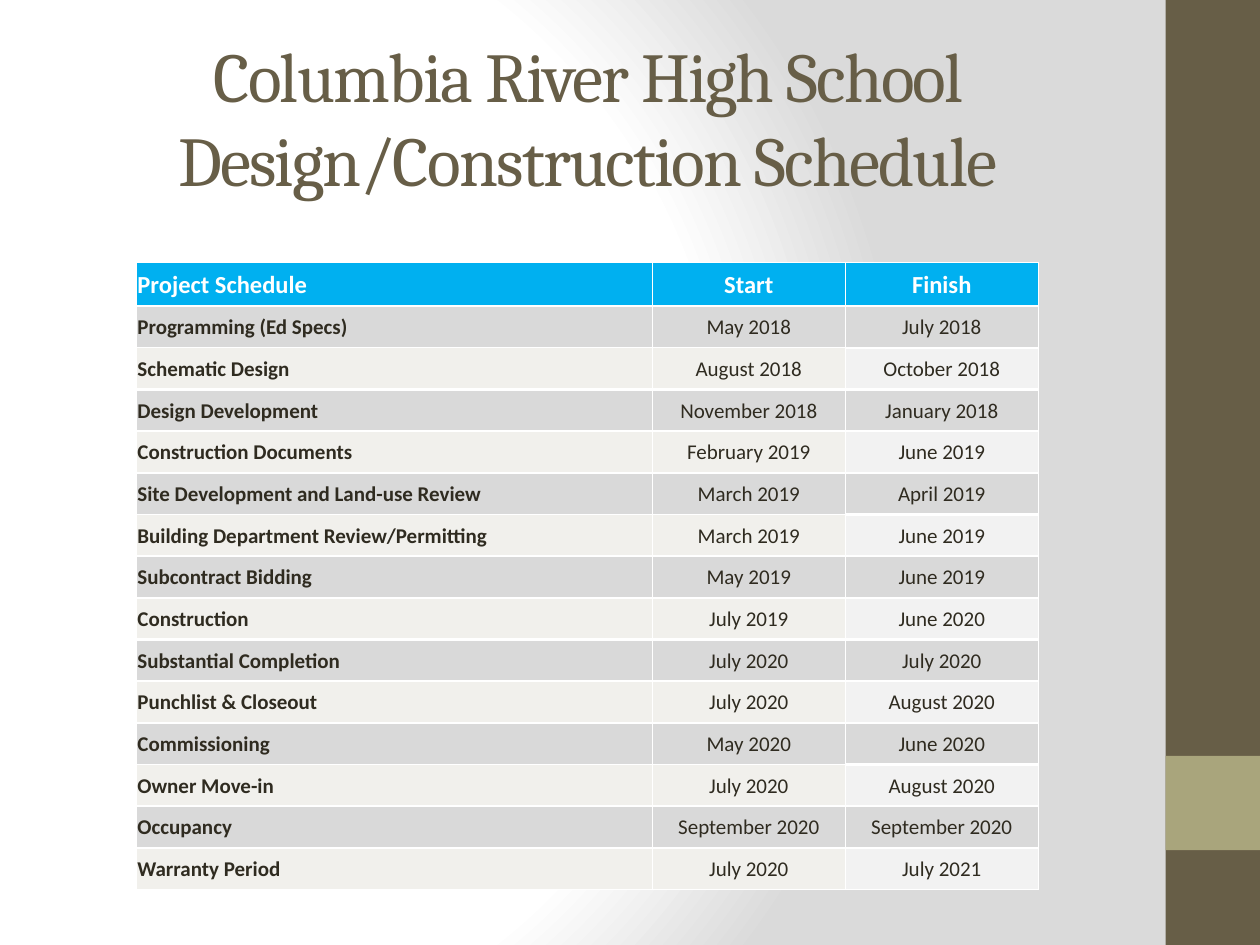
from lxml.etree import SubElement
from pptx import Presentation
from pptx.dml.color import RGBColor
from pptx.enum.shapes import MSO_SHAPE
from pptx.enum.text import MSO_ANCHOR, MSO_AUTO_SIZE, PP_ALIGN
from pptx.oxml import parse_xml
from pptx.oxml.ns import nsdecls, qn
from pptx.util import Cm, Pt

BROWN, SAGE, WHITE, INK = "675E47", "A9A57C", "FFFFFF", "2F2B20"
BLUE, GREY, CREAM, PALE = "00B0F0", "D9D9D9", "F1F0EC", "F2F2F2"
HEADER_H, ROW_H = 0.89, 0.84
COL_WIDTHS = (10.41, 3.89, 3.89)
SCHEDULE = [
    ("Project Schedule", "Start", "Finish"),
    ("Programming (Ed Specs)", "May 2018", "July 2018"),
    ("Schematic Design", "August 2018", "October 2018"),
    ("Design Development", "November 2018", "January 2018"),
    ("Construction Documents", "February 2019", "June 2019"),
    ("Site Development and Land-use Review", "March 2019", "April 2019"),
    ("Building Department Review/Permitting", "March 2019", "June 2019"),
    ("Subcontract Bidding", "May 2019", "June 2019"),
    ("Construction", "July 2019", "June 2020"),
    ("Substantial Completion", "July 2020", "July 2020"),
    ("Punchlist & Closeout", "July 2020", "August 2020"),
    ("Commissioning", "May 2020", "June 2020"),
    ("Owner Move-in", "July 2020", "August 2020"),
    ("Occupancy", "September 2020", "September 2020"),
    ("Warranty Period", "July 2020", "July 2021"),
]


def rgb(color):
    return RGBColor.from_string(color)


def set_background(s):
    """Give the slide a circular white-to-grey gradient."""
    stops = "".join(
        f'<a:gs pos="{pos * 1000}"><a:srgbClr val="{color}"/></a:gs>'
        for pos, color in ((0, WHITE), (75, WHITE), (100, "DADADA")))
    bg = parse_xml(
        f'<p:bg {nsdecls("p", "a")}><p:bgPr><a:gradFill rotWithShape="1">'
        f'<a:gsLst>{stops}</a:gsLst><a:path path="circle">'
        '<a:fillToRect l="20000" t="50000" r="100000" b="50000"/></a:path>'
        '</a:gradFill><a:effectLst/></p:bgPr></p:bg>')
    s.element.cSld.insert(0, bg)


def add_bar(s, top, height, color):
    sp = s.shapes.add_shape(MSO_SHAPE.RECTANGLE, Cm(23.5), Cm(top), Cm(1.9), Cm(height))
    sp.shadow.inherit = False
    sp.fill.solid()
    sp.fill.fore_color.rgb = rgb(color)
    sp.line.fill.background()


def add_run(p, text, font, size, color, bold=False):
    r = p.add_run()
    r.text = text
    r.font.name = font
    r.font.size = Pt(size)
    r.font.bold = bold
    r.font.color.rgb = rgb(color)
    return r


def set_title(s, text):
    sp = s.shapes.title
    sp.left, sp.top, sp.width, sp.height = Cm(1.27), Cm(0.76), Cm(21.16), Cm(3.18)
    tf = sp.text_frame
    tf.word_wrap = True
    tf.auto_size = MSO_AUTO_SIZE.NONE
    tf.vertical_anchor = MSO_ANCHOR.MIDDLE
    p = tf.paragraphs[0]
    p.alignment = PP_ALIGN.CENTER
    r = add_run(p, text, "Cambria", 40, BROWN)
    r.font._element.set("spc", "-100")


def set_borders(cell, widths):
    """Draw white borders; widths are points for left, right, top, bottom."""
    tc_pr = cell._tc.get_or_add_tcPr()
    for side, width in zip("LRTB", widths):
        ln = SubElement(tc_pr, qn(f"a:ln{side}"), w=str(Pt(width)))
        fill = SubElement(ln, qn("a:solidFill"))
        SubElement(fill, qn("a:srgbClr"), val=WHITE)


def border_widths(row, col):
    last_row, last_col = len(SCHEDULE) - 1, len(COL_WIDTHS) - 1
    if row == 0:
        return 0.5, 1 if col == last_col else 0.5, 0.5, 1.5
    left = 0.5 if col == 0 else 1
    right = 0.5 if col == last_col else 1
    top = 1.5 if row % 2 or col == last_col else 1
    bottom = 1 if row == last_row or (row % 2 and col != last_col) else 1.5
    return left, right, top, bottom


def cell_fill(row, col):
    if row == 0:
        return BLUE
    if row % 2:
        return GREY
    return PALE if col == len(COL_WIDTHS) - 1 else CREAM


def fill_cell(cell, text, row, col):
    set_borders(cell, border_widths(row, col))
    cell.fill.solid()
    cell.fill.fore_color.rgb = rgb(cell_fill(row, col))
    cell.vertical_anchor = MSO_ANCHOR.MIDDLE
    cell.margin_left = cell.margin_right = cell.margin_top = Cm(0.03)
    cell.margin_bottom = 0
    p = cell.text_frame.paragraphs[0]
    p.alignment = PP_ALIGN.CENTER if col else PP_ALIGN.LEFT
    size, color = (12, INK) if row else (14, WHITE)
    add_run(p, text, "Calibri", size, color, bold=row == 0 or col == 0)


def add_schedule(s):
    height = HEADER_H + ROW_H * (len(SCHEDULE) - 1)
    table = s.shapes.add_table(len(SCHEDULE), len(COL_WIDTHS), Cm(2.74), Cm(5.28),
                               Cm(sum(COL_WIDTHS)), Cm(height)).table
    for column, width in zip(table.columns, COL_WIDTHS):
        column.width = Cm(width)
    for i, texts in enumerate(SCHEDULE):
        table.rows[i].height = Cm(ROW_H if i else HEADER_H)
        for j, text in enumerate(texts):
            fill_cell(table.cell(i, j), text, i, j)


def main():
    prs = Presentation()
    prs.slide_width, prs.slide_height = Cm(25.4), Cm(19.05)
    s = prs.slides.add_slide(prs.slide_layouts[5])
    set_background(s)
    add_bar(s, 0, 19.05, BROWN)
    add_bar(s, 15.24, 1.9, SAGE)
    set_title(s, "Columbia River High School Design/Construction Schedule")
    add_schedule(s)
    prs.save("out.pptx")


if __name__ == "__main__":
    main()
